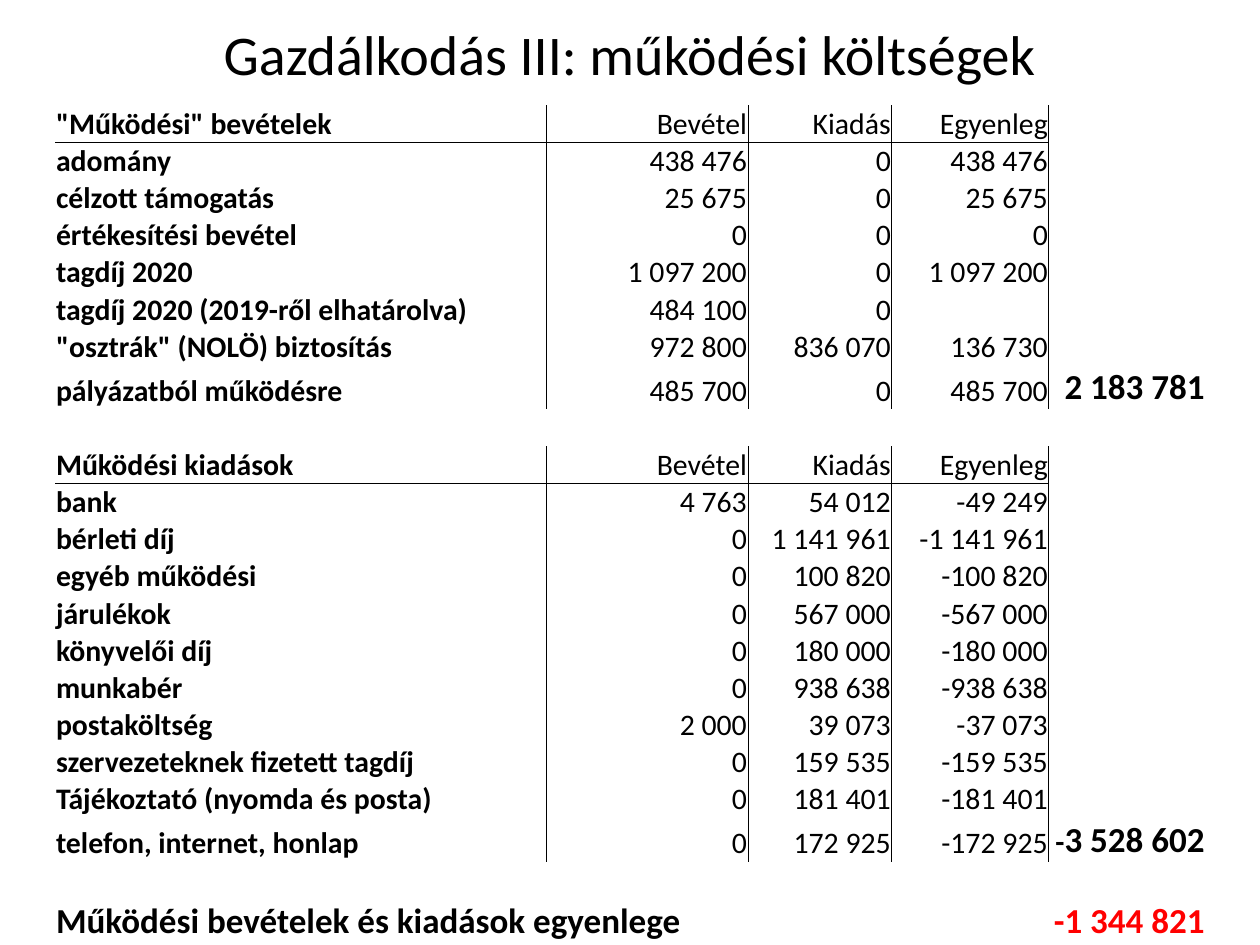
from lxml import etree
from pptx import Presentation
from pptx import util as u
from pptx.dml.color import RGBColor
from pptx.enum import text
from pptx.oxml.ns import qn

PX = 914400 // 126
PLAIN_TABLE = "{2D5ABB26-0587-4C30-8999-92F81FD0307C}"
COLUMNS = [491, 202, 144, 157, 157]
TABLE_HEIGHT = 818
TOTAL_ROW_HEIGHT = 44
HEADINGS = ("Bevétel", "Kiadás", "Egyenleg")

INCOME = [
    ('"Működési" bevételek', *HEADINGS),
    ("adomány", "438 476", "0", "438 476"),
    ("célzott támogatás", "25 675", "0", "25 675"),
    ("értékesítési bevétel", "0", "0", "0"),
    ("tagdíj 2020", "1 097 200", "0", "1 097 200"),
    ("tagdíj 2020 (2019-ről elhatárolva)", "484 100", "0", ""),
    ('"osztrák" (NOLÖ) biztosítás', "972 800", "836 070", "136 730"),
    ("pályázatból működésre", "485 700", "0", "485 700", "2 183 781"),
]
EXPENSES = [
    ("Működési kiadások", *HEADINGS),
    ("bank", "4 763", "54 012", "-49 249"),
    ("bérleti díj", "0", "1 141 961", "-1 141 961"),
    ("egyéb működési", "0", "100 820", "-100 820"),
    ("járulékok", "0", "567 000", "-567 000"),
    ("könyvelői díj", "0", "180 000", "-180 000"),
    ("munkabér", "0", "938 638", "-938 638"),
    ("postaköltség", "2 000", "39 073", "-37 073"),
    ("szervezeteknek fizetett tagdíj", "0", "159 535", "-159 535"),
    ("Tájékoztató (nyomda és posta)", "0", "181 401", "-181 401"),
    ("telefon, internet, honlap", "0", "172 925", "-172 925", "-3 528 602"),
]
BALANCE = ("Működési bevételek és kiadások egyenlege", "", "", "", "-1 344 821")


def px(length):
    return u.Emu(length * PX)


def color(value):
    return RGBColor.from_string(value)


class Sheet:
    font, ink, red = "Calibri", "000000", "FF0000"
    title_size, size, total_size = 32, 17, 20

    def __init__(self, page):
        self.page = page

    def style(self, para, size, bold=False, ink=ink, align=text.PP_ALIGN.LEFT):
        para.alignment = align
        font = para.font
        font.name, font.size, font.bold = self.font, u.Pt(size), bold
        font.color.rgb = color(ink)

    def title(self, left, top, width, height, words):
        box = self.page.shapes.add_textbox(px(left), px(top), px(width), px(height))
        frame = box.text_frame
        frame.word_wrap = True
        frame.vertical_anchor = text.MSO_ANCHOR.MIDDLE
        frame.text = words
        self.style(frame.paragraphs[0], self.title_size, align=text.PP_ALIGN.CENTER)

    def table(self, left, top, rows):
        frame = self.page.shapes.add_table(
            len(rows), len(COLUMNS), px(left), px(top),
            px(sum(COLUMNS)), px(TABLE_HEIGHT))
        table = frame.table
        table.first_row = table.horz_banding = False
        table._tbl.tblPr.find(qn("a:tableStyleId")).text = PLAIN_TABLE
        for column, width in zip(table.columns, COLUMNS):
            column.width = px(width)
        return table

    def border(self, cell, sides):
        properties = cell._tc.get_or_add_tcPr()
        for side in "LRTB":
            line = etree.SubElement(properties, qn("a:ln" + side), w=str(u.Pt(0.5)))
            if side in sides:
                fill = etree.SubElement(line, qn("a:solidFill"))
                etree.SubElement(fill, qn("a:srgbClr"), val=self.ink)
            else:
                etree.SubElement(line, qn("a:noFill"))

    def cell(self, cell, words, size, bold, ink, align, sides):
        self.border(cell, sides)
        cell.fill.background()
        cell.vertical_anchor = text.MSO_ANCHOR.BOTTOM
        cell.margin_left = cell.margin_right = cell.margin_top = px(1)
        cell.margin_bottom = 0
        para = cell.text_frame.paragraphs[0]
        self.style(para, size, bold, ink, align)
        if words:
            para.add_run().text = words
        else:
            # An empty cell needs its size on the paragraph end to keep the row low
            etree.SubElement(para._p, qn("a:endParaRPr"), sz=str(self.size * 100))


def main():
    deck = Presentation()
    deck.slide_width, deck.slide_height = px(1260), px(945)
    sheet = Sheet(deck.slides.add_slide(deck.slide_layouts[6]))

    # Title
    sheet.title(63, 0, 1134, 107, "Gazdálkodás III: működési költségek")

    # Income, expenses and balance in one table, with blank rows between
    rows = [*INCOME, (), *EXPENSES, (), BALANCE]
    table = sheet.table(55, 105, rows)
    last = len(COLUMNS) - 1
    for i, row in enumerate(rows):
        is_heading = row[1:] == HEADINGS
        is_balance = row is BALANCE
        below_heading = i > 0 and rows[i - 1][1:] == HEADINGS
        for j in range(len(COLUMNS)):
            sides = ""
            if row and not is_balance:
                sides += "L" if j > 0 else ""
                if j < last:
                    sides += "R" + "T" * below_heading + "B" * is_heading
            is_total = j == last or is_balance
            sheet.cell(
                table.cell(i, j), row[j] if j < len(row) else "",
                sheet.total_size if is_total else sheet.size,
                bold=j == 0 or is_total,
                ink=sheet.red if is_balance and j == last else sheet.ink,
                align=text.PP_ALIGN.RIGHT if j else text.PP_ALIGN.LEFT,
                sides=sides)
        if len(row) > last:
            table.rows[i].height = px(TOTAL_ROW_HEIGHT)
    table.cell(len(rows) - 1, 0).merge(table.cell(len(rows) - 1, 1))

    # The minus sign of the expense total is set smaller than its digits
    para = table.cell(len(INCOME) + len(EXPENSES), last).text_frame.paragraphs[0]
    minus, digits = para.runs[0], para.add_run()
    digits.text = minus.text[1:]
    minus.text = "-"
    minus.font.size = u.Pt(sheet.size)

    deck.save("out.pptx")


if __name__ == "__main__":
    main()
